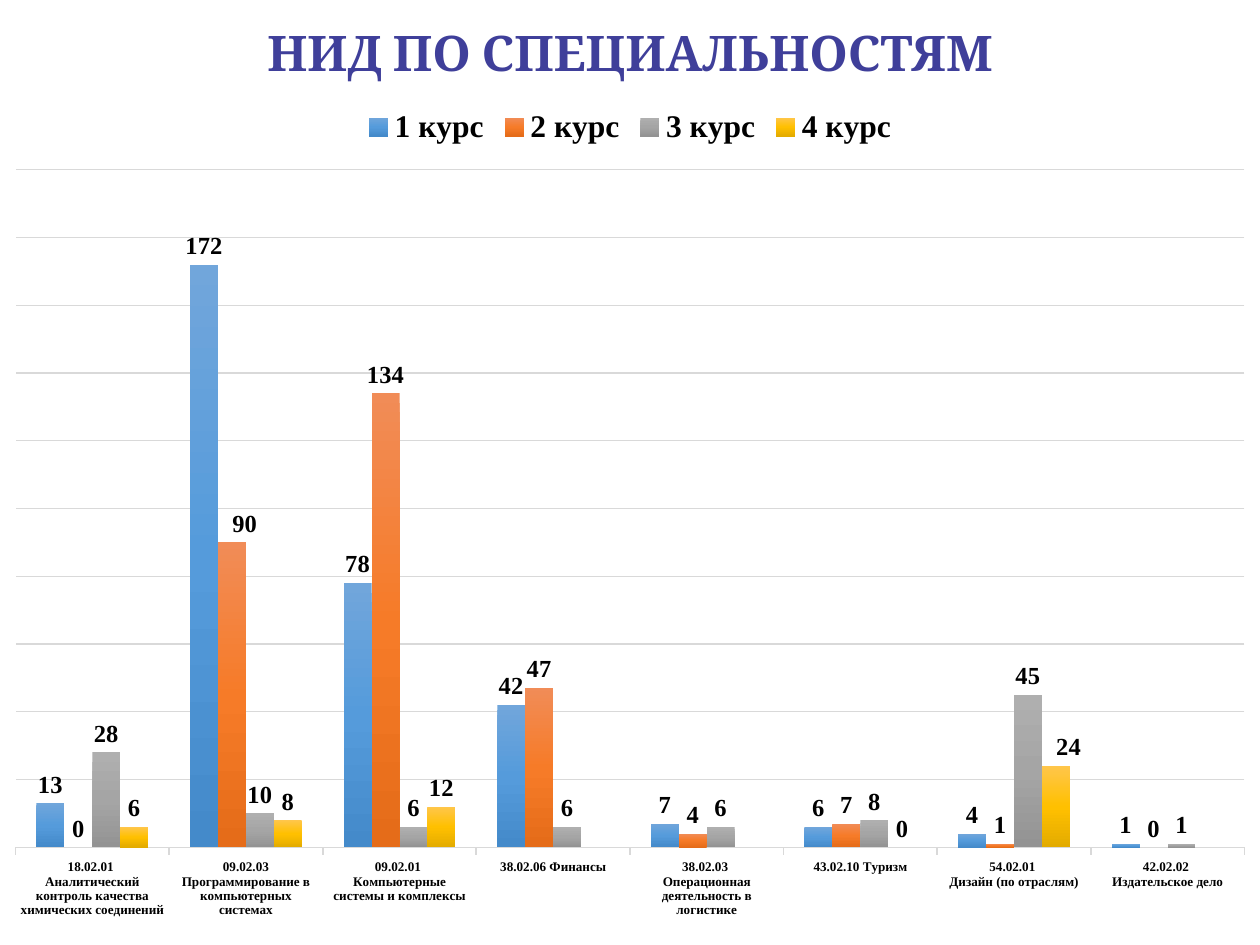
from dataclasses import dataclass, field

from lxml import etree
from pptx import Presentation
from pptx.chart.data import CategoryChartData
from pptx.dml.color import RGBColor
from pptx.enum import chart as ch, text as tx
from pptx.oxml import parse_xml
from pptx.oxml.ns import nsdecls, qn
from pptx.util import Inches, Pt


@dataclass(frozen=True)
class Theme:
    serif: str = "Times New Roman"
    head: str = "Cambria"
    ink: str = "000000"
    title: str = "3F3F9A"
    edge: str = "A585B1"
    grid: str = "D9D9D9"
    title_size: float = 28
    legend_size: float = 18
    label_size: float = 14
    base_size: float = 12
    axis_size: float = 7.5


@dataclass(frozen=True)
class Course:
    name: str
    values: tuple
    stops: tuple
    moved: dict = field(default_factory=dict)  # point -> label offset (x, y)
    bare: tuple = ()  # points without a label


THEME = Theme()
FIELDS = (
    "18.02.01 \nАналитический контроль качества химических соединений",
    "09.02.03 Программирование в компьютерных системах",
    "09.02.01 \nКомпьютерные системы и комплексы",
    "38.02.06 Финансы",
    "38.02.03 \nОперационная деятельность в логистике",
    "43.02.10 Туризм",
    "54.02.01 \nДизайн (по отраслям)",
    "42.02.02 \nИздательское дело",
)
COURSES = (
    Course("1 курс", (13, 172, 78, 42, 7, 6, 4, 1), ("71A6DB", "559BDB", "448ACA")),
    Course("2 курс", (0, 90, 134, 47, 4, 7, 1, 0), ("F18C57", "F67B28", "E56C19"),
           moved={1: (0.01, 0)}),
    Course("3 курс", (28, 10, 6, 6, 6, 8, 45, 1), ("AFAFAF", "A5A5A5", "939393")),
    Course("4 курс", (6, 8, 12, 0, 0, 0, 24, 0), ("FFC64B", "FFC000", "E3AB00"),
           moved={6: (0.01, 0)}, bare=(3, 4, 7)),
)


def style(font, size: float, color: str = THEME.ink, name: str = THEME.serif) -> None:
    font.size, font.name, font.bold = Pt(size), name, True
    font.color.rgb = RGBColor.from_string(color)


def rule(line, width: float) -> None:
    line.color.rgb = RGBColor.from_string(THEME.grid)
    line.width = Pt(width)


def place(**spots: float):
    """Return a manual chart layout."""
    rows = "".join(f'<c:{key} val="{val}"/>' for key, val in spots.items())
    inner = '<c:layoutTarget val="inner"/>' if "w" in spots else ""
    modes = '<c:xMode val="edge"/><c:yMode val="edge"/>' if inner else ""
    return parse_xml(f'<c:layout {nsdecls("c")}><c:manualLayout>{inner}{modes}{rows}'
                     "</c:manualLayout></c:layout>")


def shade(series, stops: tuple) -> None:
    """Fill the bars with an even vertical gradient."""
    step = 100000 // (len(stops) - 1)
    marks = "".join(f'<a:gs pos="{i * step}"><a:srgbClr val="{color}"/></a:gs>'
                    for i, color in enumerate(stops))
    series.format.fill.background()
    props = series._element.find(qn("c:spPr"))
    props.replace(props.find(qn("a:noFill")), parse_xml(
        f'<a:gradFill {nsdecls("a")}><a:gsLst>{marks}</a:gsLst>'
        '<a:lin ang="5400000" scaled="0"/></a:gradFill>'))


def label(series, course: Course) -> None:
    tags = series.data_labels
    tags.show_value = True
    tags.number_format, tags.number_format_is_linked = "0", False
    tags.position = ch.XL_LABEL_POSITION.OUTSIDE_END
    style(tags.font, THEME.label_size)
    for i in (*course.moved, *course.bare):
        tag = series.points[i].data_label
        tag.position = ch.XL_LABEL_POSITION.OUTSIDE_END
        style(tag.font, THEME.label_size)
        node = tags._element.xpath(f"c:dLbl[c:idx/@val='{i}']")[0]
        if i in course.moved:
            x, y = course.moved[i]
            node.insert(1, place(x=x, y=y))
        else:
            for part in list(node)[1:]:
                node.remove(part)
            etree.SubElement(node, qn("c:delete")).set("val", "1")


def add_title(slide) -> None:
    box = slide.shapes.add_textbox(Inches(0.5), Inches(0.13), Inches(9), Inches(1.25))
    box.text_frame.word_wrap = True
    para = box.text_frame.paragraphs[0]
    para.text = "НИД ПО СПЕЦИАЛЬНОСТЯМ"
    para.alignment = tx.PP_ALIGN.CENTER
    style(para.font, THEME.title_size, THEME.title, THEME.head)
    para._p.pPr.find(qn("a:defRPr")).insert(0, parse_xml(
        f'<a:ln {nsdecls("a")} w="{Pt(2.25)}"><a:solidFill>'
        f'<a:srgbClr val="{THEME.edge}"/></a:solidFill></a:ln>'))


def add_bars(slide) -> None:
    data = CategoryChartData(number_format="0")
    data.categories = FIELDS
    for course in COURSES:
        data.add_series(course.name, course.values)
    chart = slide.shapes.add_chart(
        ch.XL_CHART_TYPE.COLUMN_CLUSTERED, Inches(-0.08), Inches(0.75),
        Inches(10.16), Inches(6.64), data).chart
    style(chart.font, THEME.base_size)
    chart.has_title = False
    chart.has_legend = True
    chart.legend.position = ch.XL_LEGEND_POSITION.TOP
    chart.legend.include_in_layout = False
    style(chart.legend.font, THEME.legend_size)

    cats, vals = chart.category_axis, chart.value_axis
    cats.major_tick_mark = ch.XL_TICK_MARK.OUTSIDE
    style(cats.tick_labels.font, THEME.axis_size)
    rule(cats.format.line, 1)
    vals.visible = False
    vals.minimum_scale, vals.maximum_scale, vals.major_unit = 0, 200, 20
    vals.has_major_gridlines = True
    rule(vals.major_gridlines.format.line, 0.75)

    plot = chart.plots[0]
    plot.gap_width, plot.overlap, plot.vary_by_categories = 150, 0, False
    for series, course in zip(plot.series, COURSES):
        shade(series, course.stops)
        label(series, course)
    area = chart._chartSpace.chart.plotArea
    for old in area.findall(qn("c:layout")):
        area.remove(old)
    area.insert(0, place(x=0.02, y=0.09, w=0.96, h=0.81))


def main() -> None:
    deck = Presentation()
    deck.slide_width, deck.slide_height = Inches(10), Inches(7.5)
    slide = deck.slides.add_slide(deck.slide_layouts[6])
    add_title(slide)
    add_bars(slide)
    deck.save("out.pptx")


if __name__ == "__main__":
    main()
